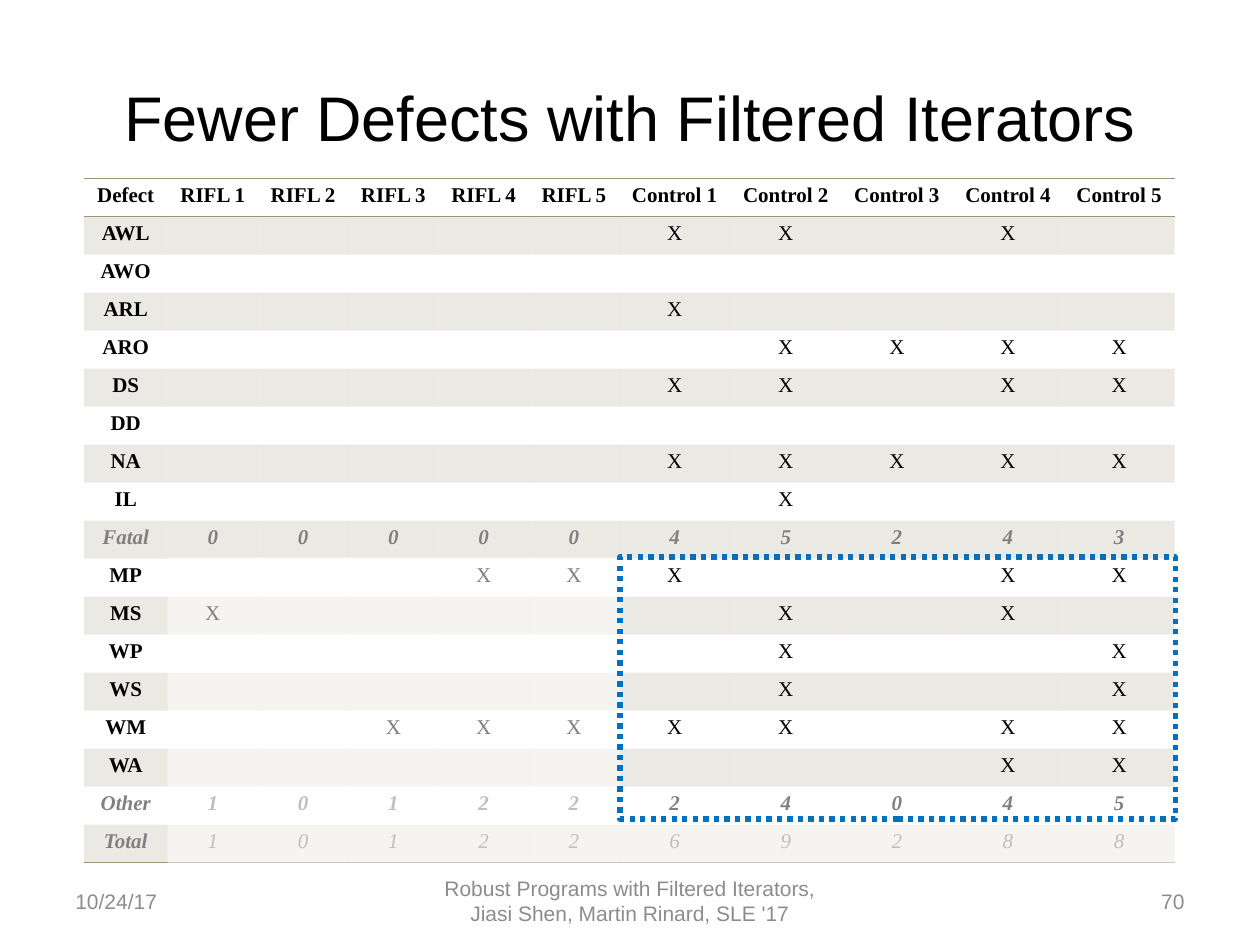
import dataclasses
import typing

import pptx
import pptx.dml.color
import pptx.enum.dml
import pptx.enum.shapes
import pptx.enum.text
import pptx.oxml
import pptx.oxml.ns
import pptx.util

Cm = pptx.util.Cm
Pt = pptx.util.Pt
ALIGN = pptx.enum.text.PP_ALIGN
MIDDLE = pptx.enum.text.MSO_ANCHOR.MIDDLE
SANS, SERIF = "Arial", "Times New Roman"
BLACK, GREY, PALE = "000000", "808080", "8C8C8C"
SAND, WHITE, BLUE = "9E9273", "FFFFFF", "0070C0"
PLAIN = "{2D5ABB26-0587-4C30-8999-92F81FD0307C}"
SPACE = 'xmlns:a="http://schemas.openxmlformats.org/drawingml/2006/main"'

HEADS = ["Defect"] + [f"{team} {n}" for team in ("RIFL", "Control") for n in range(1, 6)]
WIDTHS = [1.69] + [1.82] * 5 + [2.24] * 5


@dataclasses.dataclass
class Row:
    name: str
    marks: str
    sum: bool = False
    bold: bool = False


@dataclasses.dataclass
class Box:
    left: float
    top: float
    width: float
    height: float

    def place(self) -> list:
        return [Cm(v) for v in (self.left, self.top, self.width, self.height)]


@dataclasses.dataclass
class Note:
    text: str
    box: Box
    align: typing.Any


ROWS = [
    Row("AWL", ".....XX.X."),
    Row("AWO", ".........."),
    Row("ARL", ".....X...."),
    Row("ARO", "......XXXX"),
    Row("DS", ".....XX.XX"),
    Row("DD", ".........."),
    Row("NA", ".....XXXXX"),
    Row("IL", "......X..."),
    Row("Fatal", "0000045243", True, True),
    Row("MP", "...XXX..XX"),
    Row("MS", "X.....X.X."),
    Row("WP", "......X..X"),
    Row("WS", "......X..X"),
    Row("WM", "..XXXXX.XX"),
    Row("WA", "........XX"),
    Row("Other", "1012224045", True, True),
    Row("Total", "1012269288", True),
]

GRID = Box(1.69, 3.6, sum(WIDTHS), 13.79)
NOTES = [
    Note("10/24/17", Box(1.27, 17.65, 5.93, 1.02), ALIGN.LEFT),
    Note("Robust Programs with Filtered Iterators, Jiasi Shen, Martin Rinard, SLE '17",
         Box(8.68, 17.65, 8.04, 1.02), ALIGN.CENTER),
    Note("70", Box(18.2, 17.65, 5.93, 1.02), ALIGN.RIGHT),
]
VEILS = [Box(3.38, 11.23, 9.12, 5.21), Box(3.38, 16.51, 20.32, 0.89)]
FRAME = Box(12.5, 11.23, 11.2, 5.28)


def tint(target: typing.Any, code: str) -> None:
    target.rgb = pptx.dml.color.RGBColor.from_string(code)


def apply(target: typing.Any, form: dict) -> None:
    for key, value in form.items():
        setattr(target, key, value)


def write(para: typing.Any, text: str, align: typing.Any, code: str, form: dict) -> None:
    para.alignment = align
    run = para.add_run()
    run.text = text
    apply(run.font, form)
    tint(run.font.color, code)


def wash(fill: typing.Any, props: typing.Any, code: str, share: int) -> None:
    fill.solid()
    tint(fill.fore_color, code)
    shade = props.find(pptx.oxml.ns.qn("a:solidFill"))[0]
    shade.append(pptx.oxml.parse_xml(f'<a:alpha {SPACE} val="{share * 1000}"/>'))


def rule(props: typing.Any, sides: str) -> None:
    for spot, side in enumerate(sides):
        props.insert(spot, pptx.oxml.parse_xml(
            f'<a:ln{side} {SPACE} w="12700"><a:solidFill><a:srgbClr val="{SAND}"/>'
            f'</a:solidFill></a:ln{side}>'))


def fill_cell(cell: typing.Any, text: str, code: str, bold: bool, slant: bool,
              band: bool, sides: str) -> None:
    apply(cell, {"margin_left": Cm(0.18), "margin_right": Cm(0.18),
                 "margin_top": Cm(0.1), "margin_bottom": Cm(0.1)})
    para = cell.text_frame.paragraphs[0]
    if text:
        write(para, text, ALIGN.CENTER, code,
              {"name": SERIF, "size": Pt(12), "bold": bold, "italic": slant})
    else:
        para._p.append(pptx.oxml.parse_xml(f'<a:endParaRPr {SPACE} sz="1200"/>'))
    props = cell._tc.get_or_add_tcPr()
    if band:
        wash(cell.fill, props, SAND, 20)
    else:
        cell.fill.background()
    rule(props, sides)


def draw_grid(slide: typing.Any) -> None:
    count = len(ROWS) + 1
    frame = slide.shapes.add_table(count, len(HEADS), *GRID.place())
    table = frame.table
    apply(table, {"first_row": False, "horz_banding": False})
    table._tbl.tblPr.find(pptx.oxml.ns.qn("a:tableStyleId")).text = PLAIN
    for col, width in zip(table.columns, WIDTHS):
        col.width = Cm(width)
    for line in table.rows:
        line.height = Cm(GRID.height / count)
    for c, head in enumerate(HEADS):
        fill_cell(table.cell(0, c), head, BLACK, True, False, False, "TB")
    for r, row in enumerate(ROWS, 1):
        for c, mark in enumerate([row.name, *row.marks]):
            fill_cell(table.cell(r, c), mark.replace(".", ""),
                      GREY if row.sum else BLACK, c == 0 or row.bold, row.sum,
                      r % 2 == 1, "B" if r == len(ROWS) else "")


def draw_note(slide: typing.Any, note: Note) -> None:
    frame = slide.shapes.add_textbox(*note.box.place()).text_frame
    apply(frame, {"word_wrap": True, "vertical_anchor": MIDDLE})
    write(frame.paragraphs[0], note.text, note.align, PALE, {"name": SANS, "size": Pt(12)})


def add_box(slide: typing.Any, box: Box) -> typing.Any:
    shape = slide.shapes.add_shape(pptx.enum.shapes.MSO_SHAPE.RECTANGLE, *box.place())
    shape.shadow.inherit = False
    return shape


def draw_veil(slide: typing.Any, box: Box) -> None:
    shape = add_box(slide, box)
    wash(shape.fill, shape._element.spPr, WHITE, 50)
    shape.line.fill.background()


def draw_frame(slide: typing.Any, box: Box) -> None:
    shape = add_box(slide, box)
    shape.fill.background()
    tint(shape.line.color, BLUE)
    apply(shape.line, {"width": Pt(3),
                       "dash_style": pptx.enum.dml.MSO_LINE.ROUND_DOT})


def main() -> None:
    deck = pptx.Presentation()
    apply(deck, {"slide_width": Cm(25.4), "slide_height": Cm(19.05)})
    slide = deck.slides.add_slide(deck.slide_layouts[5])
    title = slide.shapes.title
    apply(title, dict(zip(("left", "top", "width", "height"),
                          Box(1.27, 0.76, 22.86, 3.18).place())))
    title.text_frame.vertical_anchor = MIDDLE
    write(title.text_frame.paragraphs[0], "Fewer Defects with Filtered Iterators",
          ALIGN.CENTER, BLACK, {"name": SANS, "size": Pt(36)})
    for note in NOTES:
        draw_note(slide, note)
    draw_grid(slide)
    for veil in VEILS:
        draw_veil(slide, veil)
    draw_frame(slide, FRAME)
    deck.save("out.pptx")


if __name__ == "__main__":
    main()
